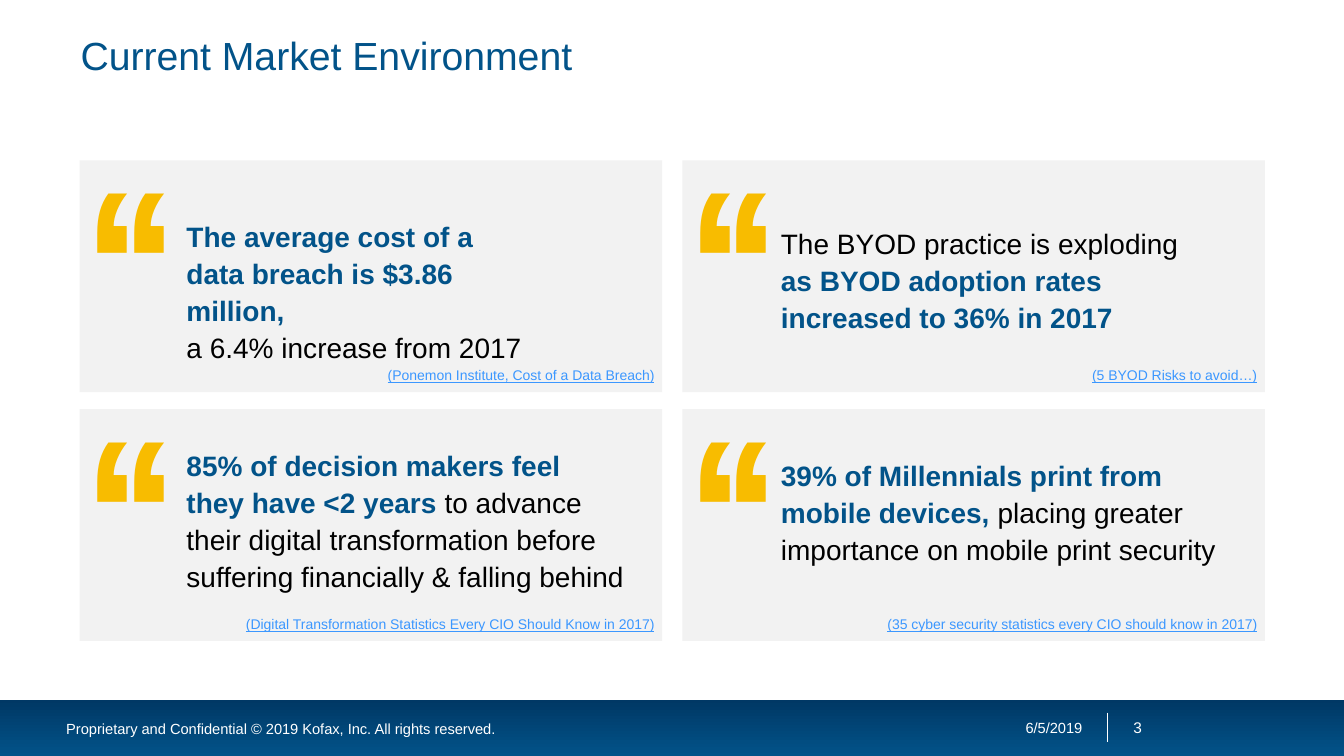
from dataclasses import dataclass

from lxml.etree import SubElement
from pptx import Presentation
from pptx.dml.color import RGBColor as RGB
from pptx.enum.shapes import MSO_CONNECTOR as Connector, MSO_SHAPE as Shape
from pptx.enum.text import MSO_ANCHOR as Anchor, MSO_AUTO_SIZE as AutoSize, PP_ALIGN as Align
from pptx.oxml.ns import qn
from pptx.util import Cm, Pt


@dataclass(frozen=True)
class Theme:
    font: str = "Arial"
    navy: RGB = RGB.from_string("025389")
    deep_navy: RGB = RGB.from_string("003865")
    card: RGB = RGB.from_string("F2F2F2")
    gold: RGB = RGB.from_string("F8BC00")
    link: RGB = RGB.from_string("3B97FF")
    black: RGB = RGB.from_string("000000")
    white: RGB = RGB.from_string("FFFFFF")
    title_size: float = 28
    quote_size: float = 20
    source_size: float = 10
    mark_size: float = 150
    footer_size: float = 10.5
    number_size: float = 11


theme = Theme()
presentation = Presentation()
presentation.slide_width, presentation.slide_height = Cm(33.87), Cm(19.05)
slide = presentation.slides.add_slide(presentation.slide_layouts[6])


def add_text(text, left, top, width, height, *, size, color=theme.black, bold=False,
             underline=None, strong=None, align=Align.LEFT, anchor=Anchor.TOP,
             line_spacing=None, wrap=True, grow=False, left_inset=0.25, tracking=None):
    """Add a text box; the part of the text equal to strong is bold navy."""
    box = slide.shapes.add_textbox(Cm(left), Cm(top), Cm(width), Cm(height))
    frame = box.text_frame
    frame.word_wrap, frame.vertical_anchor = wrap, anchor
    frame.auto_size = AutoSize.SHAPE_TO_FIT_TEXT if grow else AutoSize.NONE
    frame.margin_left = Cm(left_inset)
    paragraph = frame.paragraphs[0]
    paragraph.alignment = align
    if line_spacing:
        paragraph.line_spacing = line_spacing
    before, key, after = text.partition(strong) if strong else (text, "", "")
    for part, is_strong in ((before, False), (key, True), (after, False)):
        for index, line in enumerate(part.split("\n")):
            if index:
                paragraph.add_line_break()
            if not line:
                continue
            run = paragraph.add_run()
            run.text = line
            font = run.font
            font.name, font.size, font.underline = theme.font, Pt(size), underline
            font.bold = bold or is_strong
            font.color.rgb = theme.navy if is_strong else color
            if tracking:
                run._r.get_or_add_rPr().set("spc", str(tracking * 100))


def add_rectangle(left, top, width, height):
    rectangle = slide.shapes.add_shape(Shape.RECTANGLE, Cm(left), Cm(top), Cm(width), Cm(height))
    rectangle.shadow.inherit = False
    rectangle.line.fill.background()
    return rectangle


# Footer
footer = add_rectangle(0, 17.65, 33.87, 1.4)
footer.fill.gradient()
footer.fill.gradient_angle = 90
for stop, color in zip(footer.fill.gradient_stops, (theme.navy, theme.deep_navy)):
    stop.color.rgb = color

divider = slide.shapes.add_connector(Connector.STRAIGHT, Cm(27.91), Cm(17.96), Cm(27.91), Cm(18.69))
divider.line.color.rgb = theme.white
divider.line.width = Pt(0.75)
SubElement(divider._element.spPr, qn("a:effectLst"))

add_text("6/5/2019", 21.21, 17.78, 6.32, 1.09, size=theme.footer_size, color=theme.white,
         align=Align.RIGHT, anchor=Anchor.MIDDLE)
add_text("3", 27.91, 17.78, 1.52, 1.09, size=theme.number_size, color=theme.white,
         align=Align.CENTER, anchor=Anchor.MIDDLE)
add_text("Proprietary and Confidential © 2019 Kofax, Inc. All rights reserved.",
         1.42, 18.03, 13.84, 0.64, size=theme.footer_size, color=theme.white, anchor=Anchor.MIDDLE)

add_text("Current Market Environment", 1.78, 0.43, 30.33, 2.13, size=theme.title_size,
         color=theme.navy, anchor=Anchor.MIDDLE, line_spacing=0.8)

# Quote cards: row, column, quote, strong part, quote box, source, source width
CARD_LEFT, CARD_TOP, CARD_WIDTH, CARD_HEIGHT = 2.01, 4.04, 14.68, 5.84
COLUMN_STEP, ROW_STEP = 15.19, 6.27
cards = [
    (0, 0, "The average cost of a \ndata breach is $3.86 million,\na 6.4% increase from 2017",
     "The average cost of a \ndata breach is $3.86 million,\n", (4.45, 5.33, 9.88, 3),
     "(Ponemon Institute, Cost of a Data Breach)", 7.29),
    (0, 1, "The BYOD practice is exploding as BYOD adoption rates increased to 36% in 2017",
     "as BYOD adoption rates increased to 36% in 2017", (19.43, 5.49, 10.57, 3),
     "(5 BYOD Risks to avoid…)", 4.72),
    (1, 0, "85% of decision makers feel \nthey have <2 years to advance their digital "
     "transformation before suffering financially & falling behind",
     "85% of decision makers feel \nthey have <2 years ", (4.45, 11.1, 11.79, 4.88),
     "(Digital Transformation Statistics Every CIO Should Know in 2017)", 10.92),
    (1, 1, "39% of Millennials print from mobile devices, placing greater importance "
     "on mobile print security",
     "39% of Millennials print from mobile devices, ", (19.43, 11.35, 11.91, 3),
     "(35 cyber security statistics every CIO should know in 2017)", 9.91),
]
for row, column, quote, strong, quote_box, source, source_width in cards:
    left, top = CARD_LEFT + column * COLUMN_STEP, CARD_TOP + row * ROW_STEP
    card = add_rectangle(left, top, CARD_WIDTH, CARD_HEIGHT)
    card.fill.solid()
    card.fill.fore_color.rgb = theme.card
    add_text(quote, *quote_box, size=theme.quote_size, strong=strong, line_spacing=1.1, grow=True)
    add_text(source, left + CARD_WIDTH + 0.05 - source_width, top + 5.03, source_width, 0.69,
             size=theme.source_size, color=theme.link, underline=True, align=Align.RIGHT,
             line_spacing=1.1, wrap=False, grow=True)
    add_text("‘‘", left + 0.1, top - 0.92, 3.66, 3.53, size=theme.mark_size, color=theme.gold,
             bold=True, left_inset=0, tracking=-10)

presentation.save("out.pptx")
